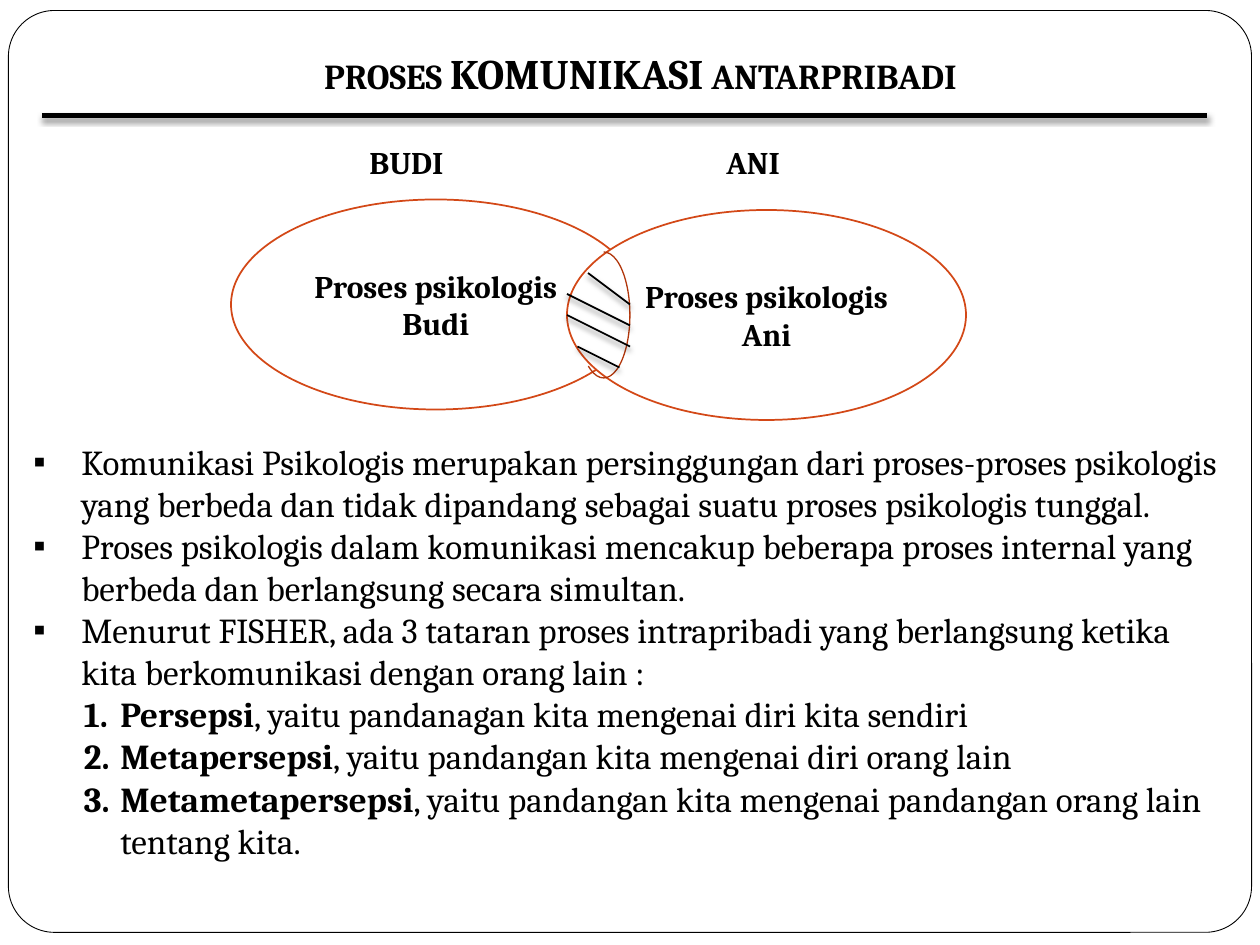
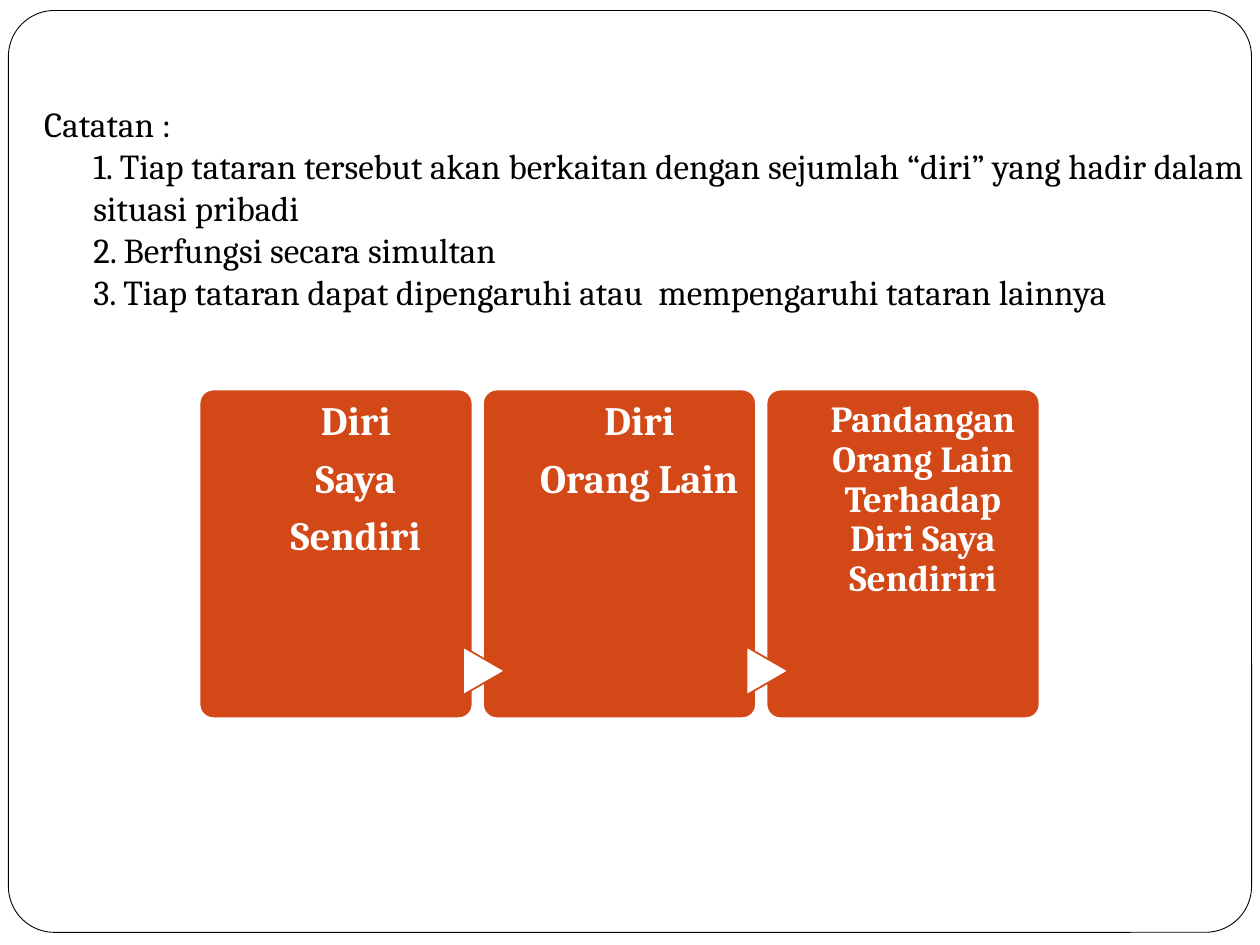
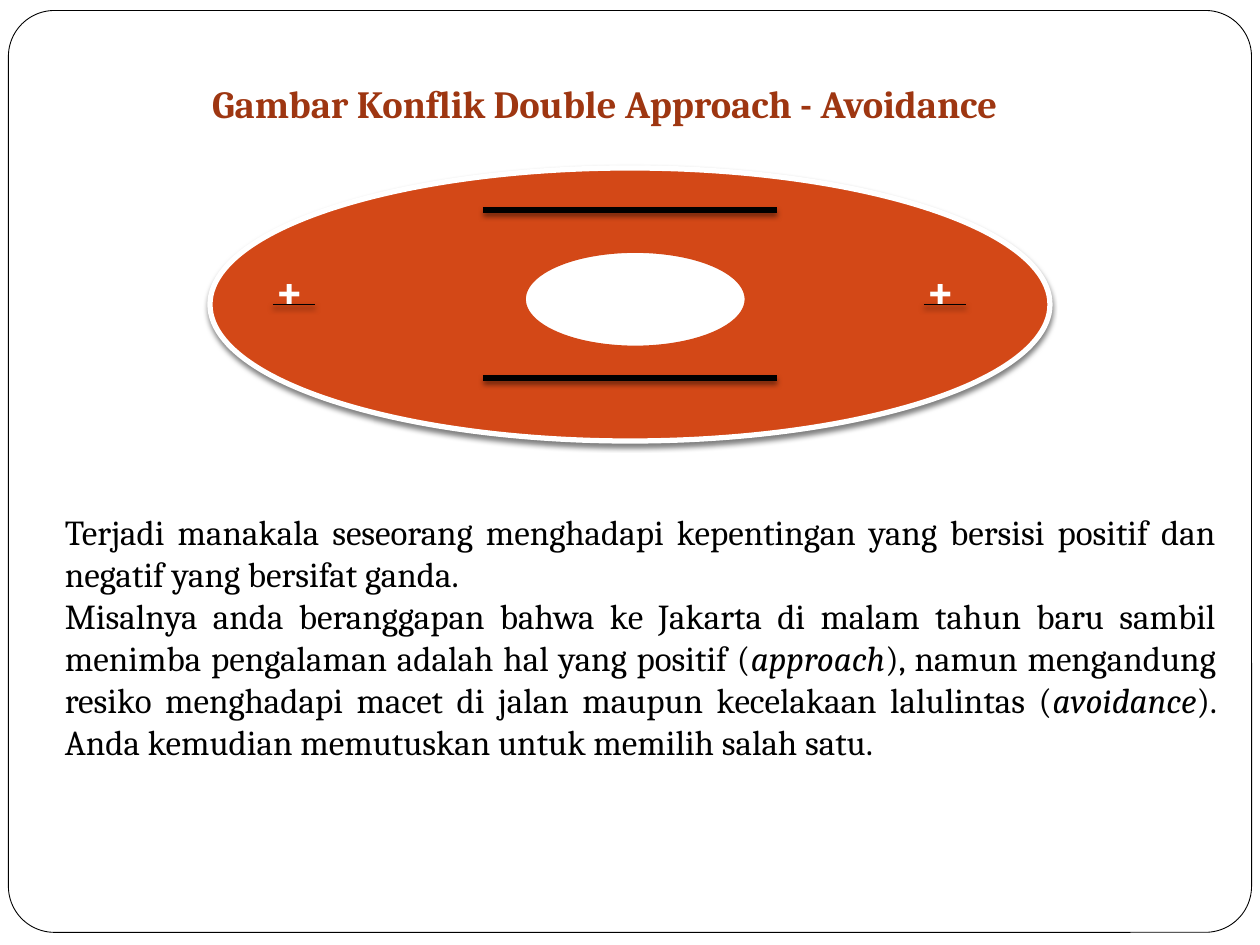
from dataclasses import dataclass

from lxml.etree import SubElement
from pptx import Presentation
from pptx.dml.color import RGBColor
from pptx.enum.shapes import MSO_CONNECTOR, MSO_SHAPE
from pptx.enum.text import MSO_ANCHOR, MSO_AUTO_SIZE, PP_ALIGN
from pptx.oxml.ns import qn
from pptx.util import Inches, Pt


@dataclass(frozen=True)
class Theme:
    font: str = "Cambria"
    ink: str = "000000"
    paper: str = "FFFFFF"
    accent: str = "D34817"
    accent_dark: str = "B1360B"
    heading: str = "9E3611"
    body: int = 20
    label: int = 18
    title_large: int = 24
    subtitle: int = 22
    card: int = 23
    card_small: int = 21
    sign: int = 28
    thick: float = 3
    thin: float = 1


THEME = Theme()
COLUMNS, ROWS = 120, 90  # grid of the slide, twelve cells to the inch
CELL = Inches(1) / 12
TITLE_INSETS = (0.1, 0.05, 0.1, 0.1)


# Grid and formatting
def grid(*cells):
    return [round(cell * CELL) for cell in cells]


def apply(target, values):
    for name, value in values.items():
        setattr(target, name, value)


def set_line(item, color, width):
    item.line.color.rgb = RGBColor.from_string(color)
    item.line.width = Pt(width)


def set_effects(item, shadow=False):
    """Replace the theme's effects by none or by a soft shadow below."""
    effects = SubElement(item.element.find(qn("p:spPr")), qn("a:effectLst"))
    if shadow:
        outer = SubElement(effects, qn("a:outerShdw"), blurRad=str(Pt(3)),
                           dist=str(Pt(2)), dir="5400000", rotWithShape="0")
        color = SubElement(outer, qn("a:srgbClr"), val=THEME.ink)
        SubElement(color, qn("a:alpha"), val="50000")


# Text
def set_indent(para, left, first):
    properties = para._p.get_or_add_pPr()
    properties.set("marL", str(Inches(left)))
    properties.set("indent", str(Inches(first)))
    return properties


def set_bullet(para, numbered):
    if numbered:
        properties = set_indent(para, 0.69, -0.29)
        SubElement(properties, qn("a:buFont"), typeface=THEME.font)
        SubElement(properties, qn("a:buAutoNum"), type="arabicPeriod")
    else:
        properties = set_indent(para, 0.38, -0.38)
        SubElement(properties, qn("a:buFont"), typeface="Arial")
        SubElement(properties, qn("a:buChar"), char="▪")


def add_span(para, text, color=THEME.ink, **font):
    span = para.add_run()
    span.text = text
    apply(span.font, {"name": THEME.font, "size": Pt(THEME.body), **font})
    span.font.color.rgb = RGBColor.from_string(color)


def write(frame, paragraphs, align=PP_ALIGN.LEFT, **font):
    """Write paragraphs, each a list of (text, font values) spans."""
    for index, spans in enumerate(paragraphs):
        para = frame.add_paragraph() if index else frame.paragraphs[0]
        para.alignment = align
        for text, extra in spans:
            add_span(para, text, **{**font, **extra})
    return frame.paragraphs


def plain(*texts):
    return [[(text, {})] for text in texts]


def set_frame(frame, insets=None, **values):
    apply(frame, {"word_wrap": True, **values})
    if insets:
        sides = ("margin_left", "margin_top", "margin_right", "margin_bottom")
        apply(frame, dict(zip(sides, map(Inches, insets))))
    return frame


def add_text(page, place, **values):
    box = page.shapes.add_textbox(*grid(*place))
    return set_frame(box.text_frame, **values)


def add_label(page, place, text, **font):
    frame = add_text(page, place, word_wrap=False,
                     auto_size=MSO_AUTO_SIZE.SHAPE_TO_FIT_TEXT)
    write(frame, plain(text), bold=True, **font)


def place_title(page, place, **values):
    title = page.shapes.title
    apply(title, dict(zip(("left", "top", "width", "height"), grid(*place))))
    return set_frame(title.text_frame, auto_size=MSO_AUTO_SIZE.NONE, **values)


# Shapes and lines
def add_figure(page, kind, place, fill, line, width=THEME.thin,
               shadow=False, adjust=()):
    figure = page.shapes.add_shape(kind, *grid(*place))
    for index, value in enumerate(adjust):
        figure.adjustments[index] = value
    if fill:
        figure.fill.solid()
        figure.fill.fore_color.rgb = RGBColor.from_string(fill)
    else:
        figure.fill.background()
    set_line(figure, line, width)
    set_effects(figure, shadow)
    return figure


def add_stroke(page, ends, width=THEME.thin):
    stroke = page.shapes.add_connector(MSO_CONNECTOR.STRAIGHT, *grid(*ends))
    set_line(stroke, THEME.ink, width)
    set_effects(stroke, shadow=True)


def add_process(page, place, text):
    oval = add_figure(page, MSO_SHAPE.OVAL, place, THEME.paper, THEME.accent)
    frame = set_frame(oval.text_frame, vertical_anchor=MSO_ANCHOR.MIDDLE)
    write(frame, plain(text), PP_ALIGN.CENTER,
          size=Pt(THEME.label), bold=True)


def add_card(page, left, texts, size, with_arrow):
    top, width, height = 37.1, 26, 31.3
    add_figure(page, MSO_SHAPE.ROUNDED_RECTANGLE, (left, top, width, height),
               THEME.accent, THEME.paper, adjust=[0.05])
    if with_arrow:
        arrow = add_figure(page, MSO_SHAPE.FLOWCHART_EXTRACT,
                           (left - 2.2, 61.9, 4.6, 4),
                           THEME.paper, THEME.accent)
        arrow.rotation = 90
    frame = add_text(page, (left + 5.2, top, 19.4, height),
                     insets=(0, 0.09, 0, 0))
    for para in write(frame, plain(*texts), PP_ALIGN.CENTER, size=Pt(size),
                      color=THEME.paper, bold=True):
        apply(para, {"line_spacing": 0.9, "space_after": Pt(0.35 * size)})


# Frame shared by all slides, kept on the master
def add_master_frame(deck, page):
    border = add_figure(page, MSO_SHAPE.ROUNDED_RECTANGLE,
                        (0.8, 1, COLUMNS - 1.6, ROWS - 2.2),
                        THEME.paper, THEME.ink, 0.5, adjust=[0.05])
    deck.slide_master.shapes.element.insert(2, border.element)


# Slides
def build_process_page(page):
    frame = place_title(page, (10, 0, 102, 10.5), insets=TITLE_INSETS,
                        vertical_anchor=MSO_ANCHOR.BOTTOM)
    write(frame, [[("PROSES ", {}),
                   ("KOMUNIKASI", {"size": Pt(THEME.title_large)}),
                   (" ANTARPRIBADI", {})]], PP_ALIGN.CENTER, bold=True)
    add_stroke(page, (4, 11, 115, 11), THEME.thick)

    # Explanation with bullets, then the three levels
    bullets = plain(
        "Komunikasi Psikologis merupakan persinggungan dari proses-proses "
        "psikologis yang berbeda dan tidak dipandang sebagai suatu proses "
        "psikologis tunggal.",
        "Proses psikologis dalam komunikasi mencakup beberapa proses internal "
        "yang berbeda dan berlangsung secara simultan.",
        "Menurut FISHER, ada 3 tataran proses intrapribadi yang berlangsung "
        "ketika kita berkomunikasi dengan orang lain :")
    levels = [[(name, {"bold": True}), (meaning, {})] for name, meaning in (
        ("Persepsi", ", yaitu pandanagan kita mengenai diri kita sendiri"),
        ("Metapersepsi", ", yaitu pandangan kita mengenai diri orang lain"),
        ("Metametapersepsi", ", yaitu pandangan kita mengenai pandangan "
                             "orang lain tentang kita."))]
    body = add_text(page, (2, 41.4, 116, 45.6),
                    auto_size=MSO_AUTO_SIZE.SHAPE_TO_FIT_TEXT)
    for index, para in enumerate(write(body, bullets + levels)):
        set_bullet(para, numbered=index >= len(bullets))

    # Overlapping processes with a hatched intersection
    add_process(page, (22, 19, 39, 20), "Proses psikologis Budi")
    add_process(page, (54, 20, 38, 20), "Proses psikologis Ani")
    add_figure(page, MSO_SHAPE.ARC, (55, 24, 5, 12), None, THEME.accent_dark,
               0.75, adjust=(162, 64.01))
    for ends in ((56, 26, 60, 29), (54, 28, 60, 31),
                 (54, 30, 60, 33), (55, 33, 59, 35)):
        add_stroke(page, ends)
    for name, left, width in (("BUDI", 34, 10), ("ANI", 68, 7.6)):
        add_label(page, (left, 13, width, 4.8), name, size=Pt(THEME.label))


def build_notes_page(page):
    frame = place_title(page, (3, 2, 117, 29), insets=TITLE_INSETS,
                        vertical_anchor=MSO_ANCHOR.BOTTOM)
    para = frame.paragraphs[0]
    para.alignment = PP_ALIGN.LEFT
    set_indent(para, 0.39, -0.39)
    lines = ("Catatan :",
             "1. Tiap tataran tersebut akan berkaitan dengan sejumlah “diri” "
             "yang hadir dalam situasi pribadi",
             "2. Berfungsi secara simultan",
             "3. Tiap tataran dapat dipengaruhi atau  mempengaruhi tataran "
             "lainnya")
    for index, line in enumerate(lines):
        if index:
            para.add_line_break()
        add_span(para, line)

    # Row of cards
    cards = ((("Diri", "Saya", "Sendiri"), THEME.card),
             (("Diri", "Orang Lain"), THEME.card),
             (("Pandangan Orang Lain Terhadap Diri Saya Sendiriri",),
              THEME.card_small))
    for index, (texts, size) in enumerate(cards):
        add_card(page, 19 + 27 * index, texts, size, with_arrow=index > 0)


def build_conflict_page(page):
    frame = place_title(page, (19, 7, 80, 5.6),
                        vertical_anchor=MSO_ANCHOR.TOP,
                        insets=(0.1, 0.05, 0.1, 0.05))
    write(frame, plain("Gambar Konflik Double Approach - Avoidance"),
          size=Pt(THEME.subtitle), color=THEME.heading, bold=True)

    # Conflict diagram
    add_figure(page, MSO_SHAPE.OVAL, (20, 16, 80, 26), THEME.accent,
               THEME.paper, THEME.thick, shadow=True)
    add_figure(page, MSO_SHAPE.OVAL, (50, 24, 21, 9), THEME.paper,
               THEME.accent)
    for row in (20, 36):
        add_stroke(page, (46, row, 74, row), THEME.thick)
    for left in (26, 88):
        add_stroke(page, (left, 29, left + 4, 29))
        add_label(page, (left - 1, 24.1, 5.3, 6.8), "+",
                  size=Pt(THEME.sign), color=THEME.paper)

    # Explanation
    italic = {"italic": True}
    body = add_text(page, (5, 48, 112, 29.5),
                    auto_size=MSO_AUTO_SIZE.SHAPE_TO_FIT_TEXT)
    write(body, [
        [("Terjadi manakala seseorang menghadapi kepentingan yang bersisi "
          "positif dan negatif yang bersifat ganda.", {})],
        [("Misalnya anda beranggapan bahwa ke Jakarta di malam tahun baru "
          "sambil menimba pengalaman adalah hal yang positif (", {}),
         ("approach", italic),
         ("), namun mengandung resiko menghadapi macet di jalan maupun "
          "kecelakaan lalulintas (", {}),
         ("avoidance", italic),
         ("). Anda kemudian memutuskan untuk memilih salah satu.", {})],
    ], PP_ALIGN.JUSTIFY)


def main():
    deck = Presentation()
    deck.slide_width, deck.slide_height = grid(COLUMNS, ROWS)
    title_only = deck.slide_layouts[5]
    builders = (build_process_page, build_notes_page, build_conflict_page)
    pages = [deck.slides.add_slide(title_only) for _ in builders]
    add_master_frame(deck, pages[0])
    for build, page in zip(builders, pages):
        build(page)
    deck.save("out.pptx")


if __name__ == "__main__":
    main()
